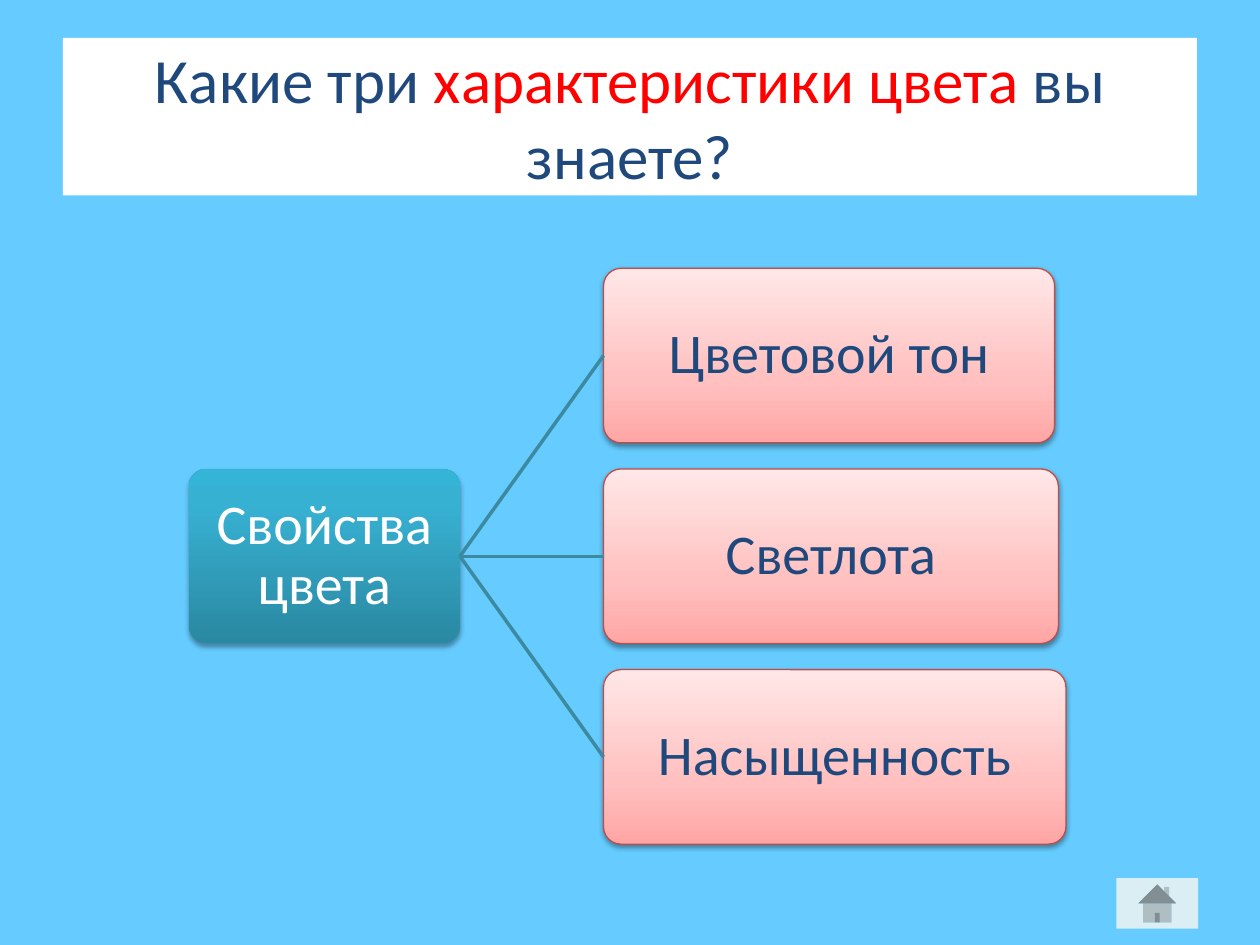
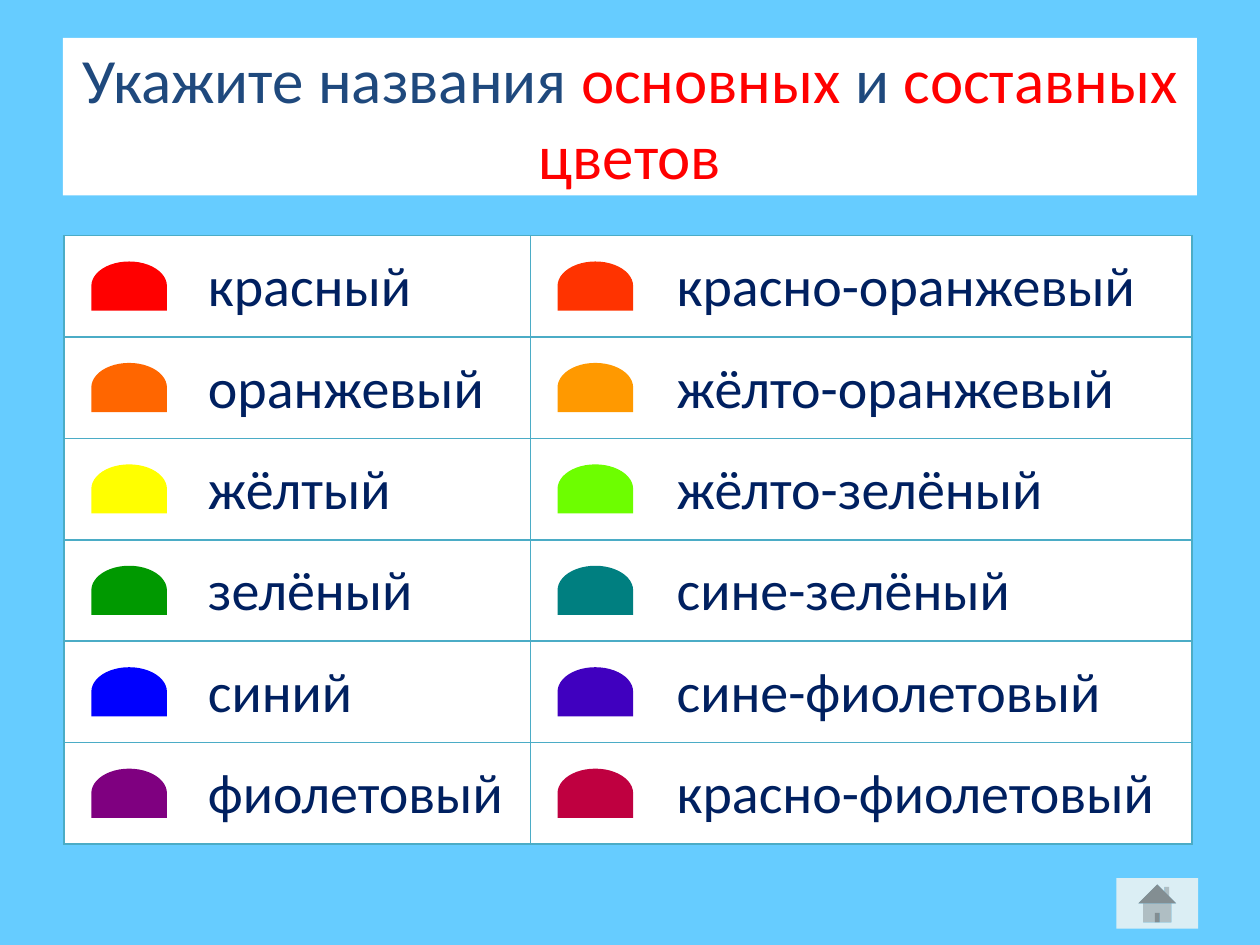
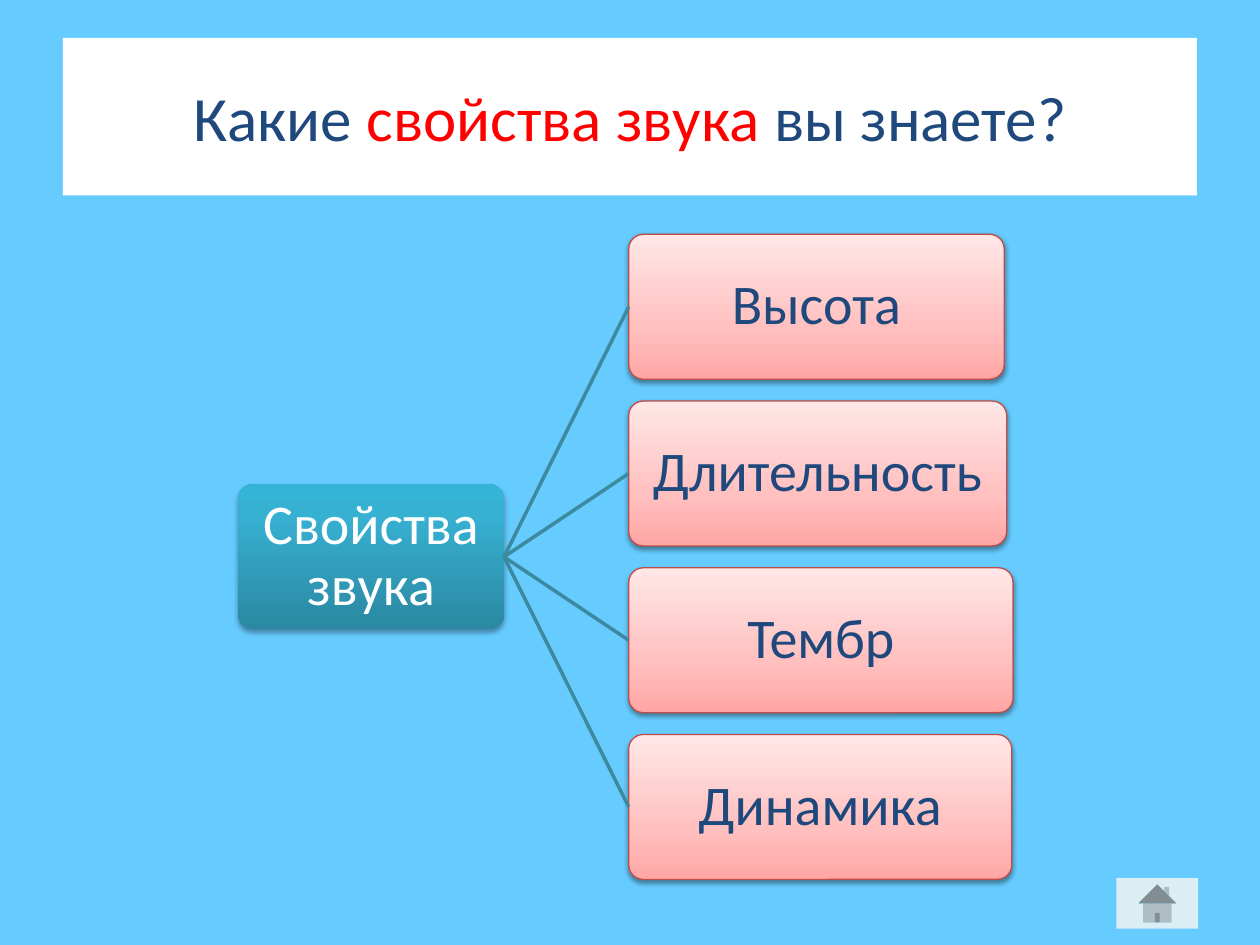
from pptx import Presentation
from pptx.dml.color import RGBColor
from pptx.enum.shapes import MSO_CONNECTOR, MSO_SHAPE
from pptx.enum.text import MSO_ANCHOR, PP_ALIGN
from pptx.oxml import parse_xml
from pptx.oxml.ns import nsdecls, qn
from pptx.util import Inches, Pt

FONT = "Calibri"
SKY = RGBColor(0x66, 0xCC, 0xFF)
WHITE = RGBColor(0xFF, 0xFF, 0xFF)
NAVY = RGBColor(0x1F, 0x49, 0x7D)
INK = RGBColor(0x00, 0x20, 0x60)
RED = RGBColor(0xFF, 0x00, 0x00)
ICE = RGBColor(0xDB, 0xEE, 0xF4)
TEAL = RGBColor(0x3C, 0x8A, 0x9F)
BRICK = RGBColor(0xBF, 0x4C, 0x48)
AQUA = RGBColor(0x4B, 0xAC, 0xC6)

# Gradient stops (percent, colour) from bottom to top
DEEP = [(0, RGBColor(0x2A, 0x88, 0xA2)), (80, RGBColor(0x37, 0xB1, 0xD2)),
        (100, RGBColor(0x34, 0xB4, 0xD6))]
ROSE = [(0, RGBColor(0xFF, 0xA6, 0xA5)), (35, RGBColor(0xFF, 0xC0, 0xBF)),
        (100, RGBColor(0xFF, 0xE7, 0xE7))]

# Rows of the colour table: name and swatch, left and right
HUES = [
    [("красный", RED), ("красно-оранжевый", RGBColor(0xFF, 0x33, 0x00))],
    [("оранжевый", RGBColor(0xFF, 0x66, 0x00)),
     ("жёлто-оранжевый", RGBColor(0xFF, 0x99, 0x00))],
    [("жёлтый", RGBColor(0xFF, 0xFF, 0x00)),
     ("жёлто-зелёный", RGBColor(0x6D, 0xFE, 0x00))],
    [("зелёный", RGBColor(0x00, 0x99, 0x00)),
     ("сине-зелёный", RGBColor(0x00, 0x7F, 0x80))],
    [("синий", RGBColor(0x00, 0x00, 0xFF)),
     ("сине-фиолетовый", RGBColor(0x40, 0x00, 0xBF))],
    [("фиолетовый", RGBColor(0x7F, 0x00, 0x80)),
     ("красно-фиолетовый", RGBColor(0xBF, 0x00, 0x40))],
]


def write(shape, runs, size=32, color=NAVY, align=PP_ALIGN.CENTER,
          anchor=MSO_ANCHOR.MIDDLE, pad=(0.1, 0.05), lead=None):
    """Fill a shape with one paragraph; runs is a string or (text, colour) pairs."""
    frame = shape.text_frame
    frame.word_wrap = True
    frame.vertical_anchor = anchor
    frame.margin_left = frame.margin_right = Inches(pad[0])
    frame.margin_top = frame.margin_bottom = Inches(pad[1])
    para = frame.paragraphs[0]
    para.alignment = align
    if lead:
        para.line_spacing = lead
    for text, tint in [(runs, color)] if isinstance(runs, str) else runs:
        run = para.add_run()
        run.text = text
        run.font.name = FONT
        run.font.size = Pt(size)
        run.font.color.rgb = tint


def block(slide, kind, left, top, width, height, fill=None):
    """Add a flat shape without outline or shadow."""
    shape = slide.shapes.add_shape(
        kind, Inches(left), Inches(top), Inches(width), Inches(height))
    shape.shadow.inherit = False
    shape.line.fill.background()
    if fill is not None:
        shape.fill.solid()
        shape.fill.fore_color.rgb = fill
    return shape


def page(deck, title):
    """Add a slide with its title band and home button."""
    slide = deck.slides.add_slide(deck.slide_layouts[6])
    block(slide, MSO_SHAPE.ACTION_BUTTON_HOME, 8.86, 6.97, 0.65, 0.4, ICE)
    band = block(slide, MSO_SHAPE.RECTANGLE, 0.5, 0.3, 9, 1.25, WHITE)
    write(band, title, size=36)
    return slide


def node(slide, text, left, top, width, height, stops, color, line=None,
         alpha=38, drop=1.6):
    """Add a rounded box with a gradient and a soft shadow."""
    box = block(slide, MSO_SHAPE.ROUNDED_RECTANGLE, left, top, width, height)
    box.adjustments[0] = 0.1
    box.fill.gradient()
    box.fill.gradient_angle = 90
    props = box.element.spPr
    marks = "".join(f'<a:gs pos="{pos * 1000}"><a:srgbClr val="{tint}"/></a:gs>'
                    for pos, tint in stops)
    old = props.find(qn("a:gradFill")).find(qn("a:gsLst"))
    old.getparent().replace(
        old, parse_xml(f'<a:gsLst {nsdecls("a")}>{marks}</a:gsLst>'))
    if line is not None:
        box.line.color.rgb = line
        box.line.width = Pt(0.75)
    props.find(qn("a:effectLst")).append(parse_xml(
        f'<a:outerShdw {nsdecls("a")} blurRad="{Pt(3.1)}" dist="{Pt(drop)}" '
        f'dir="5400000" rotWithShape="0"><a:srgbClr val="000000">'
        f'<a:alpha val="{alpha * 1000}"/></a:srgbClr></a:outerShdw>'))
    write(box, text, color=color, pad=(0.02, 0.02), lead=0.9)
    return box


def link(slide, start, end):
    """Join the right side of one box to the left side of another."""
    wire = slide.shapes.add_connector(MSO_CONNECTOR.STRAIGHT, 0, 0, 0, 0)
    wire.begin_connect(start, 3)
    wire.end_connect(end, 1)
    wire.line.color.rgb = TEAL
    wire.line.width = Pt(2)
    wire.element.spPr.append(parse_xml(f'<a:effectLst {nsdecls("a")}/>'))


def tree(slide, left, top, height, root, wide, gap, leaves):
    """Draw a root box linked to a column of leaves, 15% of a leaf apart."""
    count = len(leaves)
    tall = height / (count + 0.15 * (count - 1))
    head = node(slide, root, left, top + (height - tall) / 2, wide, tall,
                DEEP, WHITE, alpha=35, drop=1.8)
    for i, (text, width) in enumerate(leaves):
        leaf = node(slide, text, left + wide + gap, top + 1.15 * tall * i,
                    width, tall, ROSE, NAVY, line=BRICK)
        link(slide, head, leaf)


def edge(cell):
    """Draw all four borders of a table cell."""
    for side in ("lnL", "lnR", "lnT", "lnB"):
        cell._tc.get_or_add_tcPr().append(parse_xml(
            f'<a:{side} {nsdecls("a")} w="{Pt(1)}"><a:solidFill>'
            f'<a:srgbClr val="{AQUA}"/></a:solidFill></a:{side}>'))


def chart(slide, left, top, cols, pitch):
    """Draw the table of hues with a swatch and a name in each cell."""
    grid = slide.shapes.add_table(
        len(HUES), len(cols), Inches(left), Inches(top),
        Inches(sum(cols)), Inches(pitch * len(HUES))).table
    grid.first_row = grid.horz_banding = False
    for col, width in zip(grid.columns, cols):
        col.width = Inches(width)
    for i, row in enumerate(HUES):
        for j, (name, hue) in enumerate(row):
            cell = grid.cell(i, j)
            edge(cell)
            cell.fill.solid()
            cell.fill.fore_color.rgb = WHITE
            x, y = left + sum(cols[:j]), top + pitch * i
            # Swatch
            chip = block(slide, MSO_SHAPE.FLOWCHART_DELAY,
                         x + 0.32, y + 0.1, 0.39, 0.6, hue)
            chip.rotation = 270
            # Name
            shift = (1.02, 1.04)[j]
            label = slide.shapes.add_textbox(
                Inches(x + shift), Inches(y + 0.06),
                Inches(cols[j] - shift), Inches(0.66))
            write(label, name, color=INK, align=PP_ALIGN.LEFT,
                  anchor=MSO_ANCHOR.TOP, pad=(0.12, 0.06))


def main():
    deck = Presentation()
    deck.slide_width, deck.slide_height = Inches(10), Inches(7.5)
    back = deck.slide_master.background.fill
    back.solid()
    back.fore_color.rgb = SKY

    # Properties of colour
    slide = page(deck, [("Какие три ", NAVY), ("характеристики цвета ", RED),
                        ("вы знаете?", NAVY)])
    tree(slide, 1.5, 2.13, 4.57, "Свойства цвета", 2.15, 1.14,
         [("Цветовой тон", 3.58), ("Светлота", 3.61), ("Насыщенность", 3.67)])

    # Names of colours
    slide = page(deck, [("Укажите названия ", NAVY), ("основных", RED),
                        (" и ", NAVY), ("составных цветов", RED)])
    chart(slide, 0.51, 1.87, (3.7, 5.25), 0.805)

    # Properties of sound
    slide = page(deck, [("Какие ", NAVY), ("свойства звука ", RED),
                        ("вы знаете?", NAVY)])
    tree(slide, 1.89, 1.86, 5.12, "Свойства звука", 2.11, 0.99,
         [("Высота", 2.98), ("Длительность", 3), ("Тембр", 3.05),
          ("Динамика", 3.04)])

    deck.save("out.pptx")


if __name__ == "__main__":
    main()
